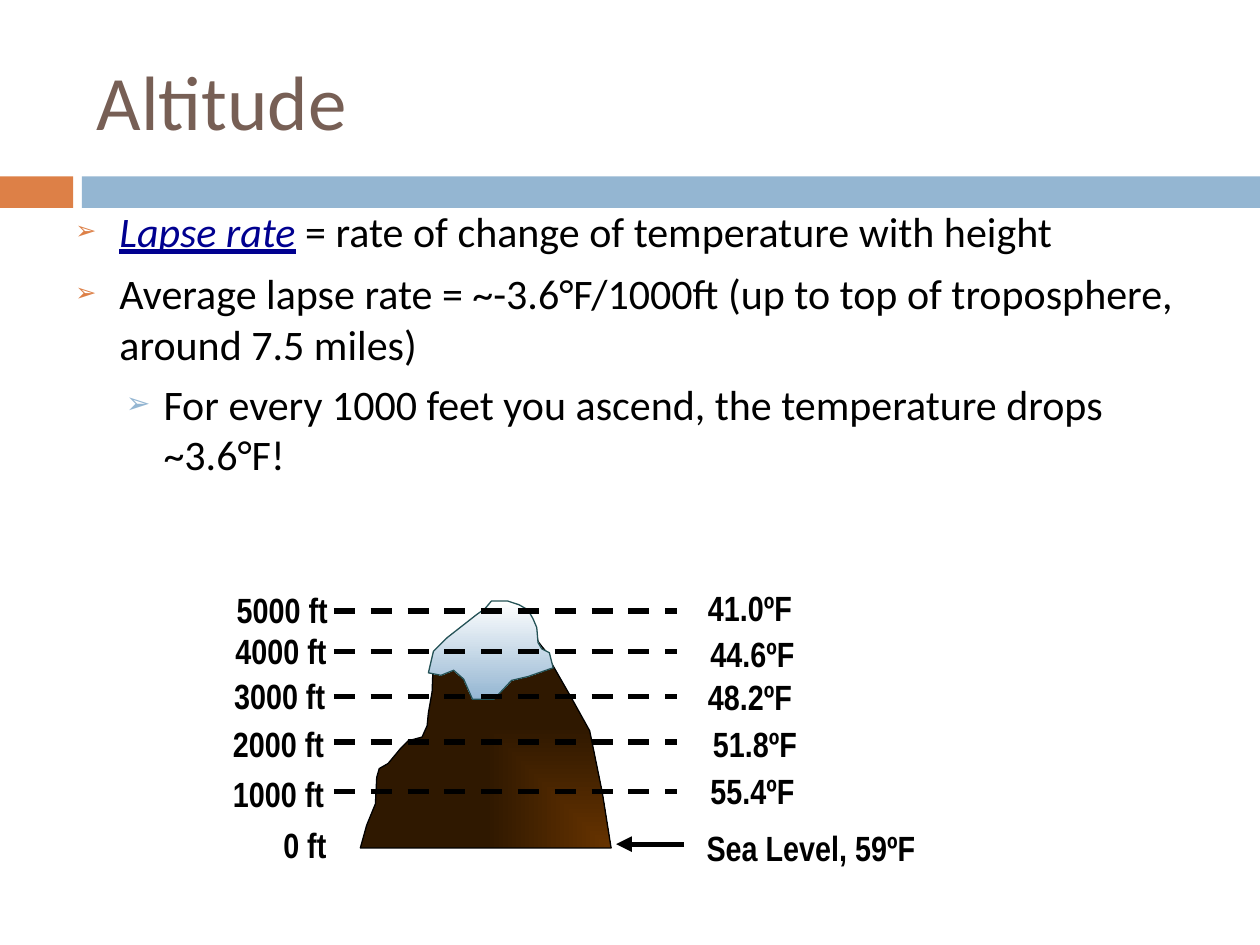
import dataclasses

import pptx
import pptx.dml.color
import pptx.enum.dml
import pptx.enum.shapes
import pptx.enum.text
import pptx.oxml.ns
import pptx.util

Inches = pptx.util.Inches
Anchor = pptx.enum.text.MSO_ANCHOR
Fit = pptx.enum.text.MSO_AUTO_SIZE


@dataclasses.dataclass(frozen=True)
class Theme:
    """Colours, fonts and type sizes of the slide."""
    orange: str = "DD8047"
    blue: str = "94B6D2"
    brown: str = "775F55"
    navy: str = "000090"
    black: str = "000000"
    white: str = "FFFFFF"
    teal: str = "245256"
    earth: str = "663300"
    dark: str = "2F1800"
    font: str = "Calibri"
    narrow: str = "Arial Narrow"
    title: int = 44
    body: int = 24
    label: int = 20


THEME = Theme()

ROCK = [(108, 2), (120, 4), (127, 6), (132, 13), (138, 19), (141, 32), (144, 36),
        (149, 42), (151, 48), (167, 76), (182, 103), (192, 152), (199, 196), (0, 196),
        (5, 178), (12, 161), (13, 140), (15, 133), (22, 129), (32, 117), (38, 111),
        (49, 108), (53, 99), (54, 89), (57, 72), (58, 44), (92, 14), (100, 5)]
SNOW = [(117, 0), (126, 3), (133, 7), (137, 14), (140, 21), (141, 33), (144, 38),
        (150, 41), (153, 53), (133, 60), (120, 63), (106, 78), (89, 78), (82, 62),
        (74, 55), (64, 59), (54, 57), (58, 40), (69, 29), (92, 11), (99, 6), (104, 0)]

LABELS = [("5000 ft", 0.03, 0.02, 0.93), ("4000 ft", 0.02, 0.34, 0.93),
          ("3000 ft", 0.01, 0.7, 0.93), ("2000 ft", 0, 1.08, 0.93),
          ("1000 ft", 0, 1.48, 0.93), ("0 ft", 0.4, 1.88, 0.6),
          ("41.0ºF", 3.77, 0, 0.87), ("44.6ºF", 3.79, 0.37, 0.87),
          ("48.2ºF", 3.77, 0.71, 0.87), ("51.8ºF", 3.81, 1.08, 0.87),
          ("55.4ºF", 3.79, 1.45, 0.87), ("Sea Level, 59ºF", 3.76, 1.91, 2.57)]
LEVELS = [0.25, 0.57, 0.93, 1.29, 1.68]


def tint(name):
    """Turn a hex string into a colour."""
    return pptx.dml.color.RGBColor.from_string(name)


def node(parent, tag, **attrs):
    """Append a drawing element with attributes."""
    item = pptx.oxml.ns.qn("a:" + tag)
    child = parent.makeelement(item, {key: str(val) for key, val in attrs.items()})
    parent.append(child)
    return child


def write(para, words, font=THEME.font, size=THEME.body, color=THEME.black,
          bold=False, slant=False, under=False):
    """Add a formatted run to a paragraph."""
    run = para.add_run()
    run.text = words
    run.font.name = font
    run.font.size = pptx.util.Pt(size)
    run.font.color.rgb = tint(color)
    run.font.bold = bold
    run.font.italic = slant
    run.font.underline = under


def frame(slide, box, anchor=Anchor.MIDDLE, fit=Fit.NONE):
    """Add a text box and return its frame."""
    area = slide.shapes.add_textbox(*map(Inches, box)).text_frame
    area.word_wrap = True
    area.auto_size = fit
    area.vertical_anchor = anchor
    return area


def bullet(para, indent, hang, space, color, scale):
    """Give a paragraph an arrow bullet and a hanging indent."""
    para.space_before = pptx.util.Pt(space)
    props = para._p.get_or_add_pPr()
    props.set("marL", str(Inches(indent)))
    props.set("indent", str(-Inches(hang)))
    node(node(props, "buClr"), "srgbClr", val=color)
    node(props, "buSzPct", val=scale * 1000)
    node(props, "buFont", typeface="Arial")
    node(props, "buChar", char="➢")


def band(slide, box):
    """Draw the two-colour band across the box."""
    left, top, width, height = box
    parts = [(left, 0.58, THEME.orange), (left + 0.65, width - 0.65, THEME.blue)]
    for start, span, color in parts:
        bar = slide.shapes.add_shape(pptx.enum.shapes.MSO_SHAPE.RECTANGLE,
                                     *map(Inches, (start, top, span, height)))
        bar.shadow.inherit = False
        bar.fill.solid()
        bar.fill.fore_color.rgb = tint(color)
        bar.line.fill.background()


def title(slide, box):
    """Write the heading in the box."""
    write(frame(slide, box).paragraphs[0], "Altitude", size=THEME.title, color=THEME.brown)


def body(slide, box):
    """Write the bulleted points in the box."""
    area = frame(slide, box, Anchor.TOP)
    first, second, third = area.paragraphs[0], area.add_paragraph(), area.add_paragraph()
    for para in (first, second):
        bullet(para, 0.35, 0.35, 7, THEME.orange, 60)
    bullet(third, 0.7, 0.3, 5.5, THEME.blue, 70)
    write(first, "Lapse rate", color=THEME.navy, slant=True, under=True)
    write(first, " = rate of change of temperature with height")
    write(second, "Average lapse rate = ~-3.6°F/1000ft "
                  "(up to top of troposphere, around 7.5 miles)")
    write(third, "For every 1000 feet you ascend, the temperature drops ~3.6°F!")


def outline(slide, left, top, points, colors, edge):
    """Draw a closed shape in hundredths of an inch with a two-stop gradient."""
    pen = slide.shapes.build_freeform(*points[0], scale=Inches(0.01))
    pen.add_line_segments(points[1:], close=True)
    shape = pen.convert_to_shape(Inches(left), Inches(top))
    shape.shadow.inherit = False
    shape.line.color.rgb = tint(edge)
    shape.line.width = pptx.util.Pt(0.75)
    shape.fill.gradient()
    shape.fill.gradient_angle = 270
    for stop, color, place in zip(shape.fill.gradient_stops, colors, (0, 1)):
        stop.color.rgb = tint(color)
        stop.position = place
    return shape


def corner(shape):
    """Let the gradient spread from the lower right corner."""
    grad = shape._element.spPr.find(pptx.oxml.ns.qn("a:gradFill"))
    grad.remove(grad.find(pptx.oxml.ns.qn("a:lin")))
    node(node(grad, "path", path="rect"), "fillToRect", l=100000, t=100000)


def rule(slide, start, end, level):
    """Draw a thick level line and return it."""
    line = slide.shapes.add_connector(pptx.enum.shapes.MSO_CONNECTOR.STRAIGHT,
                                      *map(Inches, (start, level, end, level)))
    line.line.color.rgb = tint(THEME.black)
    line.line.width = pptx.util.Pt(3)
    node(line._element.spPr, "effectLst")
    return line


def mountain(slide, box):
    """Draw the peak with its height lines and labels in the box."""
    left, top = box[:2]
    peak = left + 1.11, top + 0.17
    corner(outline(slide, *peak, ROCK, (THEME.earth, THEME.dark), THEME.black))
    outline(slide, *peak, SNOW, (THEME.white, THEME.blue), THEME.teal)
    arrow = rule(slide, left + 3.68, left + 3.14, top + 2.1)
    node(arrow.line._get_or_add_ln(), "tailEnd", type="triangle")
    for level in LEVELS:
        line = rule(slide, left + 0.9, left + 3.62, top + level)
        line.line.dash_style = pptx.enum.dml.MSO_LINE.DASH
    for words, across, down, span in LABELS:
        area = frame(slide, (left + across, top + down, span, 0.44),
                     fit=Fit.SHAPE_TO_FIT_TEXT)
        area.word_wrap = span > 1
        write(area.paragraphs[0], words, font=THEME.narrow, size=THEME.label, bold=True)


def main():
    """Build and save the slide."""
    deck = pptx.Presentation()
    deck.slide_width, deck.slide_height = Inches(10), Inches(7.5)
    slide = deck.slides.add_slide(deck.slide_layouts[6])
    band(slide, (0, 1.4, 10, 0.25))
    title(slide, (0.67, 0.25, 8.92, 1.08))
    body(slide, (0.5, 1.58, 9, 5.25))
    mountain(slide, (1.75, 4.6, 6.33, 2.35))
    deck.save("out.pptx")


if __name__ == "__main__":
    main()
